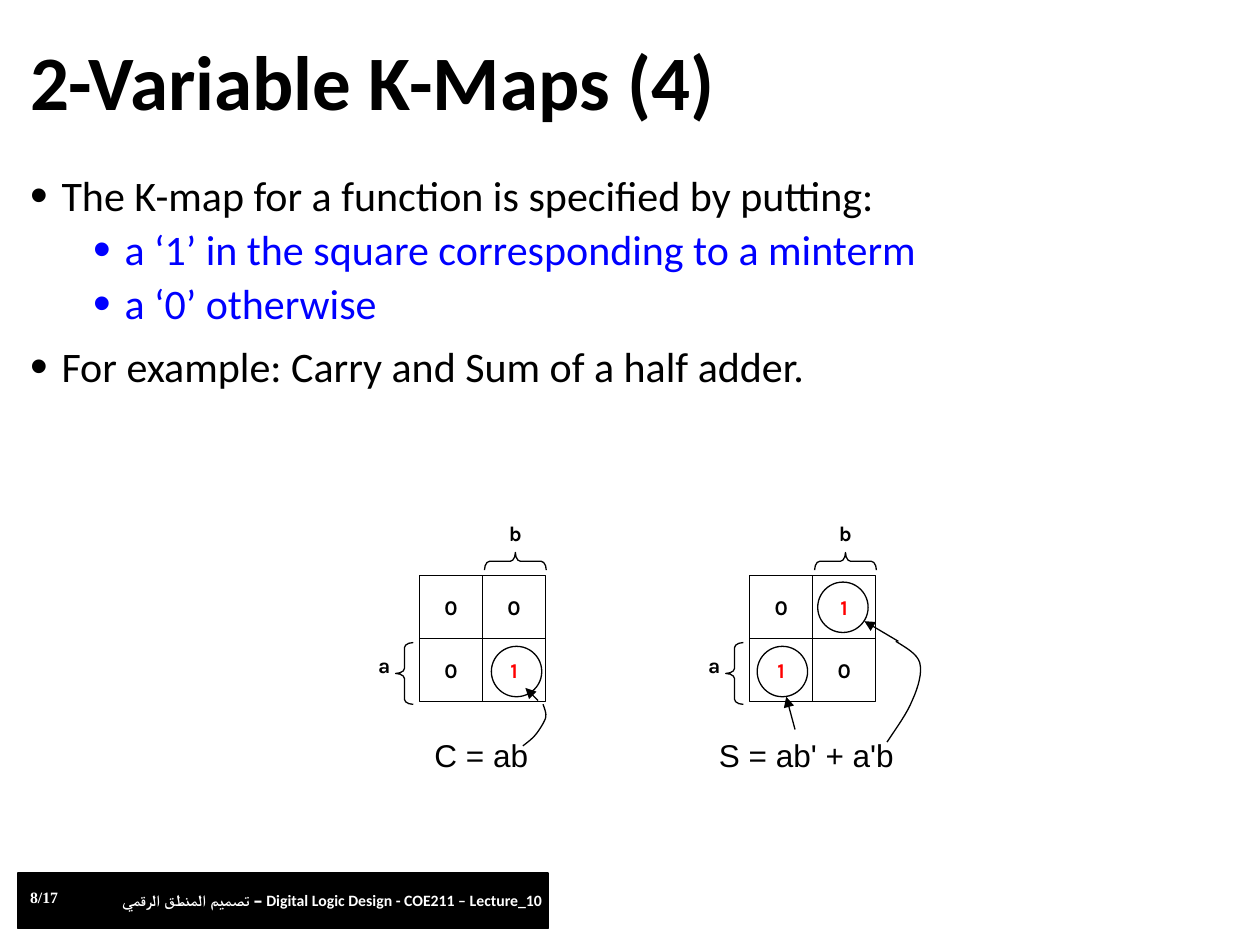
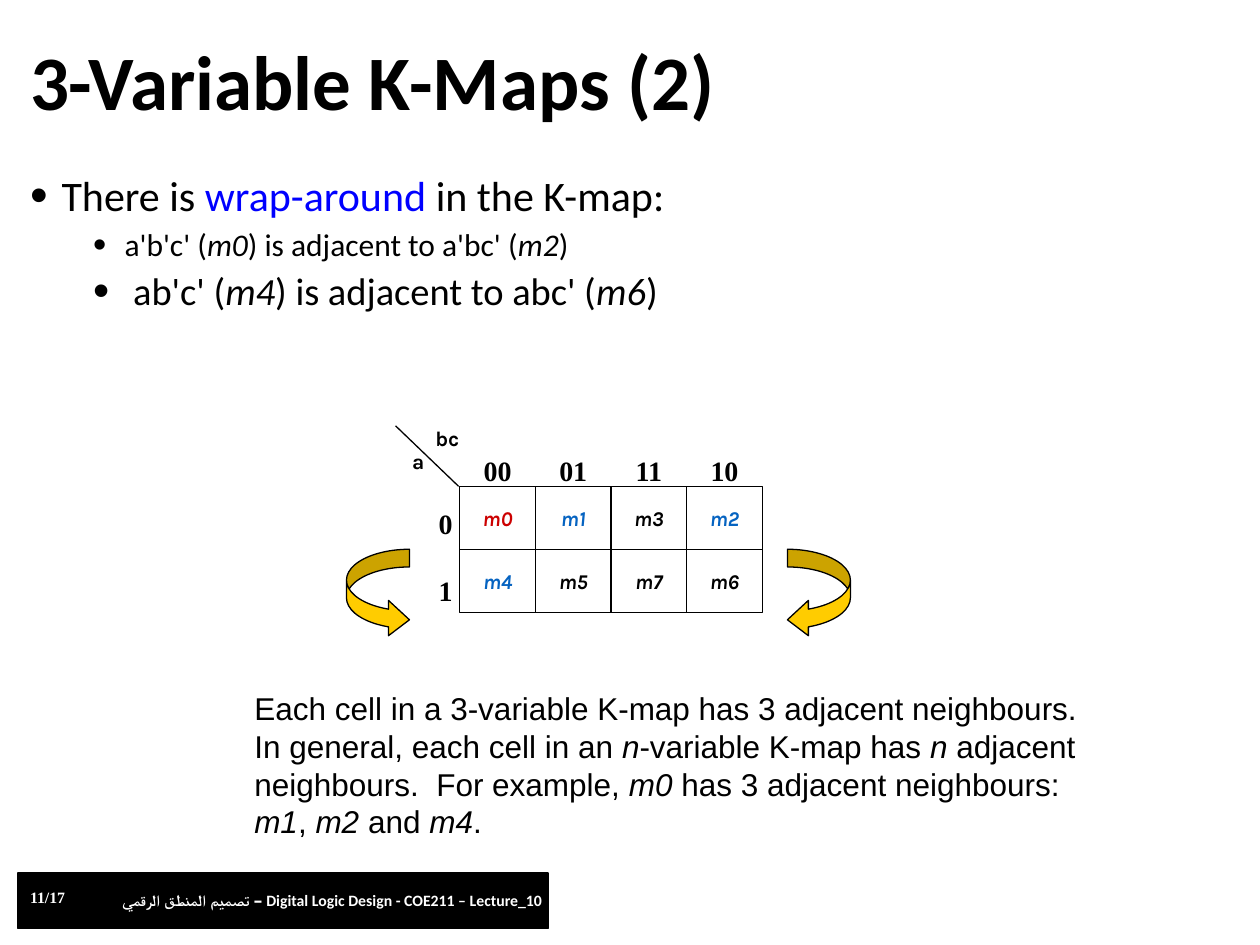
from lxml import etree
from pptx import Presentation
from pptx.dml.color import RGBColor
from pptx.enum.shapes import MSO_CONNECTOR, MSO_SHAPE
from pptx.enum.text import MSO_ANCHOR, PP_ALIGN
from pptx.oxml.ns import qn
from pptx.util import Inches, Pt

RECT, OVAL = MSO_SHAPE.RECTANGLE, MSO_SHAPE.OVAL
BRACE, WRAP_ARROW = MSO_SHAPE.LEFT_BRACE, MSO_SHAPE.CURVED_RIGHT_ARROW
STRAIGHT = MSO_CONNECTOR.STRAIGHT
LEFT, CENTER, RIGHT = PP_ALIGN.LEFT, PP_ALIGN.CENTER, PP_ALIGN.RIGHT
TOP, MIDDLE = MSO_ANCHOR.TOP, MSO_ANCHOR.MIDDLE

BLACK, WHITE, BLUE, RED = "000000", "FFFFFF", "0000FF", "FF0000"
NEIGHBOUR, CHOSEN, GOLD = "0563C1", "CC0000", "FFCC00"
MAP_FONT = dict(font="Karla", size=12, bold=True, align=CENTER)
AXIS_FONT = dict(font="Times New Roman", size=16, bold=True)
COURSE = "تصميم المنطق الرقمي – Digital Logic Design - COE211 – Lecture_10"
PAGES = 17


def rgb(color):
    return RGBColor.from_string(color)


# Text
def write(paragraph, text, font="Calibri", size=24, color=BLACK, bold=False,
          align=LEFT, accent=None):
    """Fill a paragraph; parts between asterisks take the accent format."""
    paragraph.alignment = align
    for index, part in enumerate(text.split("*")):
        if not part:
            continue
        look = dict(color=color, italic=False)
        if index % 2:
            look.update(accent or dict(italic=True))
        run = paragraph.add_run()
        run.text = part
        run.font.name, run.font.size = font, Pt(size)
        run.font.bold, run.font.italic = bold, look["italic"]
        run.font.color.rgb = rgb(look["color"])


def add_text(slide, box, text, anchor=TOP, spacing=None, **style):
    frame = slide.shapes.add_textbox(*map(Inches, box)).text_frame
    frame.word_wrap = True
    frame.vertical_anchor = anchor
    frame.paragraphs[0].line_spacing = spacing
    write(frame.paragraphs[0], text, **style)


def add_bullets(slide, items):
    """Each item is (level, text, style)."""
    body = slide.shapes.add_textbox(Inches(0.14), Inches(1.34),
                                    Inches(9.74), Inches(5.41)).text_frame
    body.word_wrap = True
    for index, (level, text, style) in enumerate(items):
        paragraph = body.add_paragraph() if index else body.paragraphs[0]
        paragraph.level = level
        paragraph.line_spacing = 0.9
        paragraph.space_before = Pt(5 if level else 10)
        write(paragraph, text, **style)
        props = paragraph._p.get_or_add_pPr()
        props.set("marL", str(Inches(0.25 + 0.5 * level)))
        props.set("indent", str(-Inches(0.25)))
        for tag, name, value in (("a:buSzPct", "val", "120000"),
                                 ("a:buFont", "typeface", "Arial"),
                                 ("a:buChar", "char", "•")):
            etree.SubElement(props, qn(tag)).set(name, value)


# Shapes and lines
def outline(shape, fill=None, width=0.75):
    shape.shadow.inherit = False
    if fill:
        shape.fill.solid()
        shape.fill.fore_color.rgb = rgb(fill)
    else:
        shape.fill.background()
    shape.line.color.rgb = rgb(BLACK)
    shape.line.width = Pt(width)
    return shape


def add_shape(slide, kind, box, fill=None, width=0.75, adjust=()):
    shape = slide.shapes.add_shape(kind, *map(Inches, box))
    for index, value in enumerate(adjust):
        shape.adjustments[index] = value
    return outline(shape, fill, width)


def add_line(slide, start, end, arrow=False):
    line = slide.shapes.add_connector(STRAIGHT, *map(Inches, start + end))
    line.line.color.rgb = rgb(BLACK)
    line.line.width = Pt(0.75)
    if arrow:
        etree.SubElement(line.line._get_or_add_ln(), qn("a:tailEnd")).set("type", "triangle")
    etree.SubElement(line._element.spPr, qn("a:effectLst"))
    return line


def add_curve(slide, points, steps=8):
    """Draw chained cubic curves: a start, then three points per curve."""
    track = [points[0]]
    for first in range(0, len(points) - 1, 3):
        a, b, c, d = points[first:first + 4]
        for step in range(1, steps + 1):
            t = step / steps
            u = 1 - t
            track.append(tuple(u**3 * p + 3 * u * u * t * q + 3 * u * t * t * r + t**3 * s
                               for p, q, r, s in zip(a, b, c, d)))
    track = [(Inches(x), Inches(y)) for x, y in track]
    builder = slide.shapes.build_freeform(*track[0])
    builder.add_line_segments(track[1:], close=False)
    outline(builder.convert_to_shape())


# K-map parts
def add_kmap(slide, left, top, cell_width, rows, colors, italic=False):
    cell_height = 0.5
    width, height = cell_width * len(rows[0]), cell_height * len(rows)
    frame = add_shape(slide, RECT, (left, top, width, height))

    def divide(start, end, centred, sites):
        line = add_line(slide, start, end)
        if centred:
            line.begin_connect(frame, sites[0])
            line.end_connect(frame, sites[1])

    for row in range(1, len(rows)):
        y = top + row * cell_height
        divide((left, y), (left + width, y), row * 2 == len(rows), (1, 3))
    for column in range(1, len(rows[0])):
        x = left + column * cell_width
        divide((x, top), (x, top + height), column * 2 == len(rows[0]), (0, 2))
    for row, values in enumerate(rows):
        for column, value in enumerate(values):
            box = (left + column * cell_width, top + 0.1 + row * cell_height, cell_width, 0.4)
            add_text(slide, box, f"*{value}*" if italic else value,
                     color=colors.get(value, BLACK), **MAP_FONT)


def add_two_variable_map(slide, left, rows, formula, formula_left):
    top = 4.57
    add_kmap(slide, left, top, 0.5, rows, {"1": RED})
    add_text(slide, (left - 0.5, top + 0.56, 0.44, 0.4), "a", **MAP_FONT)
    add_text(slide, (left + 0.54, top - 0.49, 0.44, 0.32), "b", **MAP_FONT)
    add_shape(slide, BRACE, (left - 0.19, top + 0.53, 0.14, 0.49), adjust=(0.289, 0.5))
    b_brace = add_shape(slide, BRACE, (left + 0.69, top - 0.36, 0.14, 0.49),
                        adjust=(0.289, 0.5))
    b_brace.rotation = 90
    add_text(slide, (formula_left, 5.79, 1.62, 0.4), formula,
             font="Arial", size=18, align=CENTER)


# Slides
def start_slide(deck, title, page):
    slide = deck.slides.add_slide(deck.slide_layouts[6])
    add_shape(slide, RECT, (0.14, 6.93, 4.21, 0.44), fill=BLACK, width=1)
    footer = dict(size=9, color=WHITE, bold=True)
    add_text(slide, (0.14, 7, 0.51, 0.25), f"{page}/{PAGES}", font="Times New Roman", **footer)
    add_text(slide, (0.87, 7.02, 3.72, 0.25), COURSE, **footer)
    add_text(slide, (0.14, 0.25, 9.74, 0.85), title, anchor=MIDDLE, spacing=0.9,
             size=44, bold=True)
    return slide


def half_adder_slide(deck):
    slide = start_slide(deck, "2-Variable K-Maps (4)", 8)
    add_bullets(slide, [
        (0, "The K-map for a function is specified by putting:", {}),
        (1, "a ‘1’ in the square corresponding to a minterm", dict(color=BLUE)),
        (1, "a ‘0’ otherwise", dict(color=BLUE)),
        (0, "For example: Carry and Sum of a half adder.", {}),
    ])
    add_two_variable_map(slide, 3.33, ["00", "01"], "C = ab", 3.01)
    add_two_variable_map(slide, 5.95, ["01", "10"], "S = ab' + a'b", 5.59)

    # Circled minterms and the pointers from their terms
    for x, y in ((3.9, 5.13), (6.01, 5.13), (6.49, 4.62)):
        add_shape(slide, OVAL, (x, y, 0.4, 0.4))
    for start, end in (((4.27, 5.56), (4.17, 5.46)),
                       ((6.31, 5.79), (6.24, 5.53)),
                       ((7.13, 5.09), (6.86, 4.93))):
        add_line(slide, start, end, arrow=True)
    add_curve(slide, [(4.31, 5.59), (4.32, 5.62), (4.34, 5.66), (4.33, 5.7),
                      (4.32, 5.73), (4.29, 5.78), (4.26, 5.82),
                      (4.23, 5.86), (4.19, 5.89), (4.15, 5.92)])
    add_curve(slide, [(7.11, 5.09), (7.19, 5.14), (7.28, 5.19), (7.3, 5.26),
                      (7.32, 5.34), (7.29, 5.45), (7.24, 5.56),
                      (7.2, 5.66), (7.12, 5.77), (7.04, 5.89)])


def wrap_around_slide(deck):
    slide = start_slide(deck, "3-Variable K-Maps (2)", 11)
    add_bullets(slide, [
        (0, "There is *wrap-around* in the K-map:", dict(accent=dict(color=BLUE))),
        (1, "a'b'c' (*m0*) is adjacent to a'bc' (*m2*)", dict(size=18)),
        (1, " ab'c' (*m4*) is adjacent to abc' (*m6*)", dict(size=22)),
    ])
    left, top, cell_width = 3.65, 3.86, 0.6
    add_kmap(slide, left, top, cell_width,
             [["m0", "m1", "m3", "m2"], ["m4", "m5", "m7", "m6"]],
             {"m0": CHOSEN, "m1": NEIGHBOUR, "m2": NEIGHBOUR, "m4": NEIGHBOUR}, italic=True)

    # Axis values and variable names
    for column, code in enumerate(("00", "01", "11", "10")):
        add_text(slide, (left + column * cell_width, 3.55, cell_width, 0.4), code,
                 align=CENTER, **AXIS_FONT)
    for row, code in enumerate("01"):
        add_text(slide, (3.35, 3.97 + row * 0.53, 0.34, 0.4), code, align=RIGHT, **AXIS_FONT)
    add_line(slide, (3.64, 3.86), (3.14, 3.38))
    add_text(slide, (3.1, 3.51, 0.44, 0.4), "a", **MAP_FONT)
    add_text(slide, (3.29, 3.33, 0.52, 0.32), "bc", **MAP_FONT)

    # Wrap-around arrows, the right one mirrored
    for x, mirrored in ((2.75, False), (6.25, True)):
        arrow = add_shape(slide, WRAP_ARROW, (x, 4.36, 0.5, 0.7), fill=GOLD,
                          adjust=(0.281, 0.561, 0.333))
        if mirrored:
            arrow._element.spPr.xfrm.set("flipH", "1")

    add_text(slide, (1.92, 5.42, 6.83, 1.33),
             "Each cell in a 3-variable K-map has 3 adjacent neighbours.  In general, "
             "each cell in an *n*-variable K-map has *n* adjacent neighbours.  For example, "
             "*m0* has 3 adjacent neighbours: *m1*, *m2* and *m4*.", font="Arial", size=18)


def main():
    deck = Presentation()
    deck.slide_width, deck.slide_height = Inches(10), Inches(7.5)
    half_adder_slide(deck)
    wrap_around_slide(deck)
    deck.save("out.pptx")


if __name__ == "__main__":
    main()
